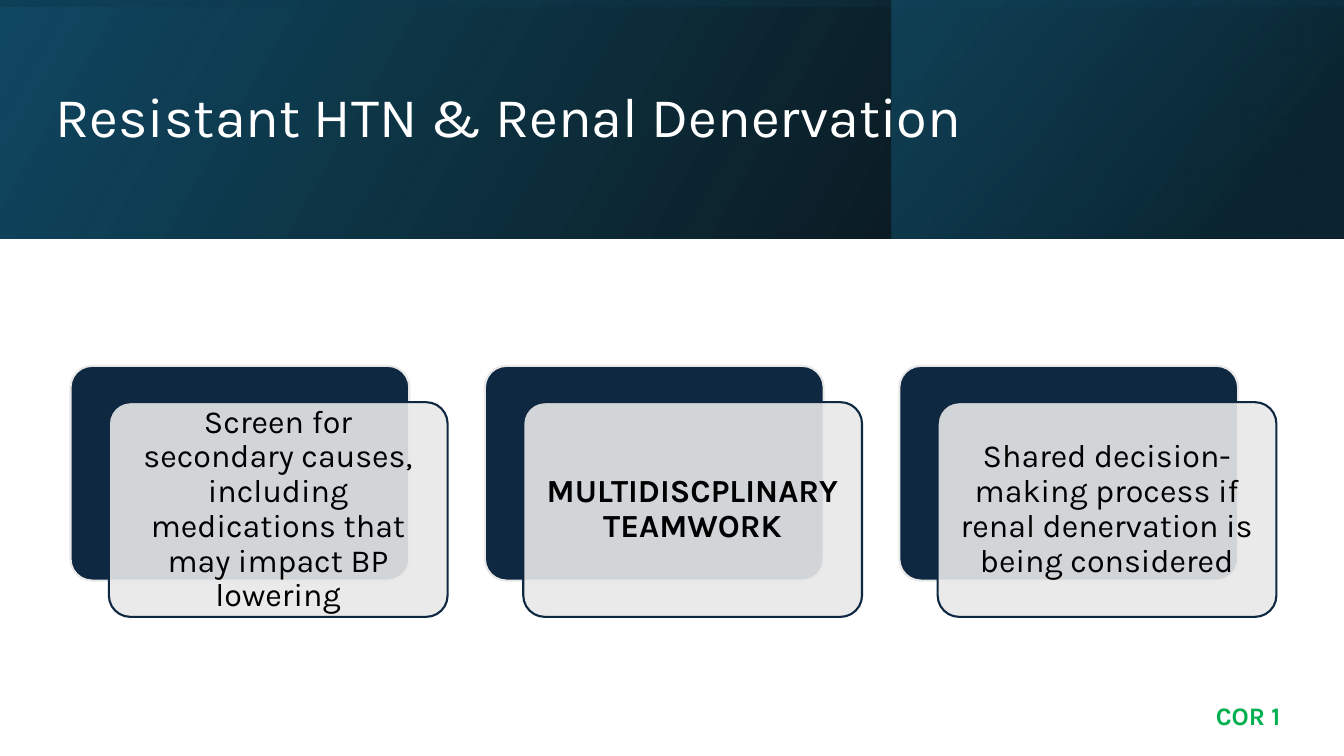
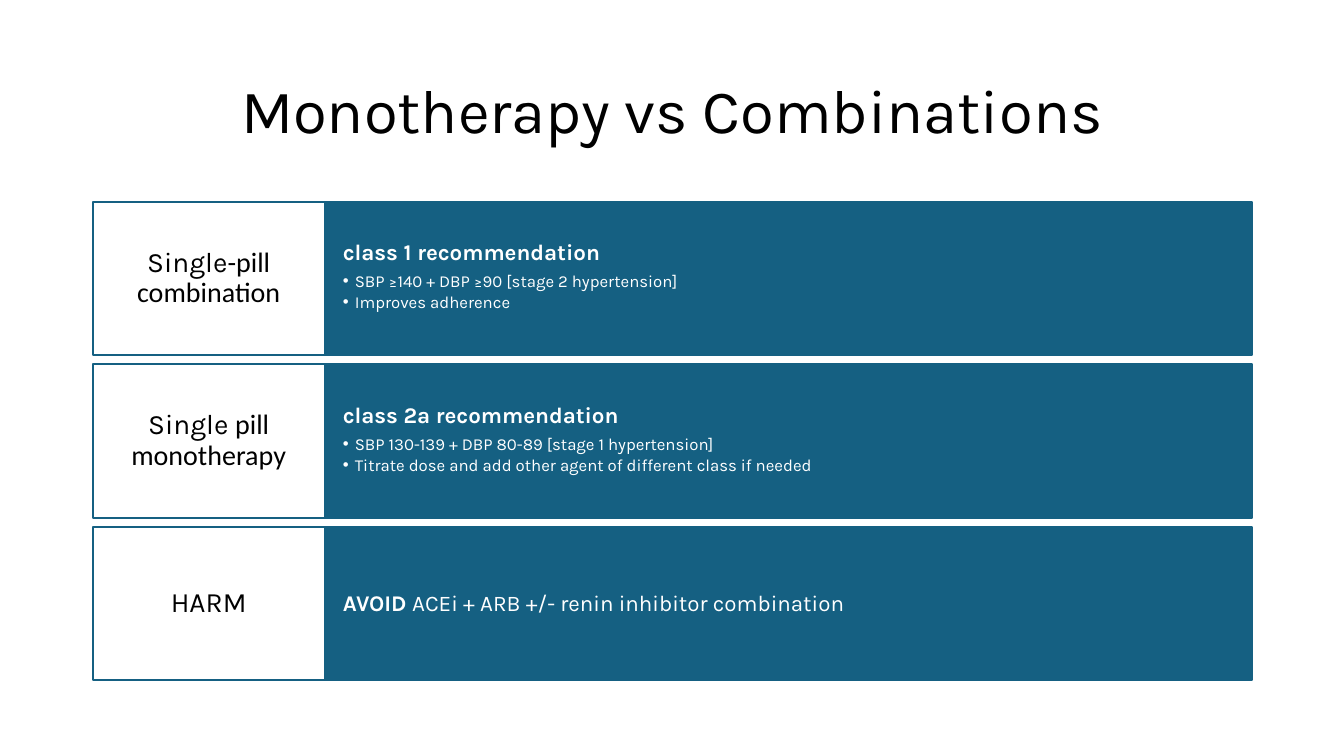
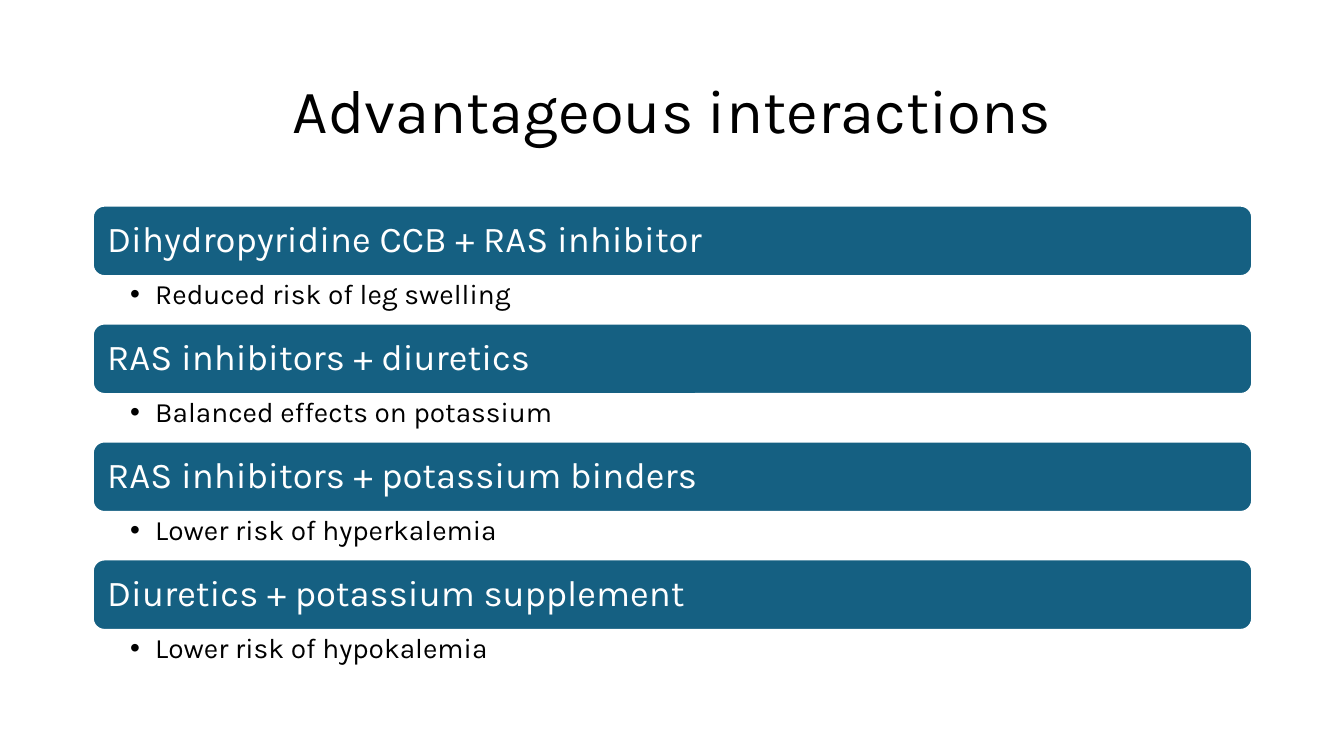
from lxml.etree import SubElement
from pptx import Presentation
from pptx.dml.color import RGBColor
from pptx.enum.shapes import MSO_SHAPE
from pptx.enum.text import MSO_ANCHOR, MSO_AUTO_SIZE, PP_ALIGN
from pptx.oxml.ns import qn
from pptx.util import Inches, Pt

NAVY, TEAL, GREY = "0E2841", "156082", "E8E8E8"
BLACK, WHITE, GREEN = "000000", "FFFFFF", "00B050"
color = RGBColor.from_string


def add_box(page, kind, area, fill, edge):
    box = page.shapes.add_shape(kind, *map(Inches, area))
    box.shadow.inherit = False
    box.fill.solid()
    box.fill.fore_color.rgb = color(fill)
    box.line.color.rgb = color(edge)
    box.line.width = Pt(1.5)
    return box


def write(shape, paragraphs, ink, margins=(0.1, 0.05), anchor=MSO_ANCHOR.MIDDLE,
          align=PP_ALIGN.LEFT, spacing=0.9):
    frame = shape.text_frame
    side, end = map(Inches, margins)
    frame_format = {"word_wrap": True, "auto_size": MSO_AUTO_SIZE.NONE,
                    "vertical_anchor": anchor, "margin_left": side,
                    "margin_right": side, "margin_top": end, "margin_bottom": end}
    for name, value in frame_format.items():
        setattr(frame, name, value)
    for index, (spans, indent, after) in enumerate(paragraphs):
        para = frame.add_paragraph() if index else frame.paragraphs[0]
        if indent:
            properties = para._p.get_or_add_pPr()
            properties.set("marL", str(Inches(indent)))
            properties.set("indent", str(-Inches(indent)))
            SubElement(properties, qn("a:buFont")).set("typeface", "Arial")
            SubElement(properties, qn("a:buChar")).set("char", "•")
        para_format = {"alignment": align, "line_spacing": spacing,
                       "space_before": Pt(0), "space_after": Pt(after)}
        for name, value in para_format.items():
            setattr(para, name, value)
        for text, size, bold, face in spans:
            span = para.add_run()
            span.text = text
            span.font.color.rgb = color(ink)
            font_format = {"size": Pt(size), "bold": bold, "name": face}
            for name, value in font_format.items():
                setattr(span.font, name, value)


deck = Presentation()
deck.slide_width, deck.slide_height = Inches(13.33), Inches(7.5)

titles = [
    ("Resistant HTN & Renal Denervation", 40, WHITE, PP_ALIGN.LEFT, (0.45, 0.32, 10.63, 1.72)),
    ("Monotherapy vs Combinations", 44, BLACK, PP_ALIGN.CENTER, (0.92, 0.4, 11.5, 1.45)),
    ("Advantageous interactions", 44, BLACK, PP_ALIGN.CENTER, (0.92, 0.4, 11.5, 1.45)),
]
pages = []
for text, size, ink, align, area in titles:
    page = deck.slides.add_slide(deck.slide_layouts[5])
    title = page.shapes.title
    for name, value in zip(("left", "top", "width", "height"), area):
        setattr(title, name, Inches(value))
    write(title, [([(text, size, False, "Karla")], 0, 0)], ink, align=align)
    pages.append(page)
renal_page, therapy_page, interaction_page = pages

bands = [
    ((0, 0, 13.33, 2.37), 0, 30, [(0, BLACK, 96), (1, "104862", 100)]),
    ((8.84, 0, 4.49, 2.37), 0, 40, [(0.19, "0B3041", 68), (1, TEAL, 48)]),
    ((5.48, -5.48, 2.37, 13.33), 270, 10, [(0.23, "104862", 16), (0.99, BLACK, 45)]),
]
for area, rotation, angle, stops in bands:
    band = renal_page.shapes.add_shape(MSO_SHAPE.RECTANGLE, *map(Inches, area))
    band.shadow.inherit = False
    band.line.fill.background()
    band.rotation = rotation
    band.element.spPr.xfrm.set("flipH", "1")
    band.fill.gradient()
    band.fill.gradient_angle = angle
    for stop, (position, shade, _) in zip(band.fill.gradient_stops, stops):
        stop.position = position
        stop.color.rgb = color(shade)
    for shade, (_, _, opacity) in zip(list(band.element.iter(qn("a:srgbClr"))), stops):
        SubElement(shade, qn("a:alpha")).set("val", str(opacity * 1000))
    renal_page.shapes.title.element.addprevious(band.element)

cards = [
    ("Screen for secondary causes, including medications that may impact BP lowering", False),
    ("MULTIDISCPLINARY TEAMWORK", True),
    ("Shared decision-making process if renal denervation is being considered", False),
]
for column, (text, bold) in enumerate(cards):
    left = 0.7 + column * 4.11
    back = add_box(renal_page, MSO_SHAPE.ROUNDED_RECTANGLE, (left, 3.63, 3.36, 2.13), NAVY, GREY)
    front = add_box(renal_page, MSO_SHAPE.ROUNDED_RECTANGLE,
                    (left + 0.38, 3.99, 3.36, 2.13), GREY, NAVY)
    for card in (back, front):
        card.adjustments[0] = 0.1
    SubElement(next(front.element.iter(qn("a:srgbClr"))), qn("a:alpha")).set("val", "90000")
    write(front, [([(text, 23, bold, "Karla")], 0, 0)], BLACK, (0.1, 0.1), align=PP_ALIGN.CENTER)

grade = renal_page.shapes.add_textbox(*map(Inches, (11.96, 6.9, 0.91, 0.4)))
write(grade, [([("COR 1", 18, True, "Karla")], 0, 0)], GREEN, anchor=MSO_ANCHOR.TOP, spacing=1.0)

therapies = [
    ([("Single", "Karla"), ("-pill combination", "Calibri")],
     [("class 1 recommendation", True)],
     ["SBP ≥140 + DBP ≥90 [stage 2 hypertension]", "Improves adherence"]),
    ([("Single ", "Karla"), ("pill monotherapy", "Calibri")],
     [("class 2a recommendation", True)],
     ["SBP 130-139 + DBP 80-89 [stage 1 hypertension]",
      "Titrate dose and add other agent of different class if needed"]),
    ([("HARM", "Karla")],
     [("AVOID ", True), ("ACEi + ARB +/- renin inhibitor combination", False)],
     []),
]
for row, (label, heading, points) in enumerate(therapies):
    top = 2 + row * 3.23 / 2
    detail = add_box(therapy_page, MSO_SHAPE.RECTANGLE, (3.22, top, 9.2, 1.52), TEAL, TEAL)
    lines = [([(text, 16, bold, "Karla") for text, bold in heading], 0, 5.6)]
    lines += [([(point, 12, False, "Karla")], 0.12, 2) for point in points]
    write(detail, lines, WHITE, (0.18, 0.39), MSO_ANCHOR.TOP if points else MSO_ANCHOR.MIDDLE)
    name_box = add_box(therapy_page, MSO_SHAPE.RECTANGLE, (0.92, top, 2.3, 1.52), WHITE, TEAL)
    write(name_box, [([(text, 20, False, face) for text, face in label], 0, 0)], BLACK,
          (0.12, 0.15), align=PP_ALIGN.CENTER)

interactions = [
    ("Dihydropyridine CCB + RAS inhibitor", "Reduced risk of leg swelling"),
    ("RAS inhibitors + diuretics", "Balanced effects on potassium"),
    ("RAS inhibitors + potassium binders", "Lower risk of hyperkalemia"),
    ("Diuretics + potassium supplement", "Lower risk of hypokalemia"),
]
for row, (pair, benefit) in enumerate(interactions):
    top = 2.04 + row * 1.17
    bar = add_box(interaction_page, MSO_SHAPE.ROUNDED_RECTANGLE, (0.92, top, 11.5, 0.7), TEAL, WHITE)
    write(bar, [([(pair, 26, False, "Karla")], 0, 0)], WHITE, (0.11, 0.11))
    note = interaction_page.shapes.add_textbox(*map(Inches, (0.92, top + 0.7, 11.5, 0.47)))
    write(note, [([(benefit, 20, False, "Karla")], 0.25, 0)], BLACK, (0.37, 0.04), MSO_ANCHOR.TOP)

deck.save("out.pptx")
